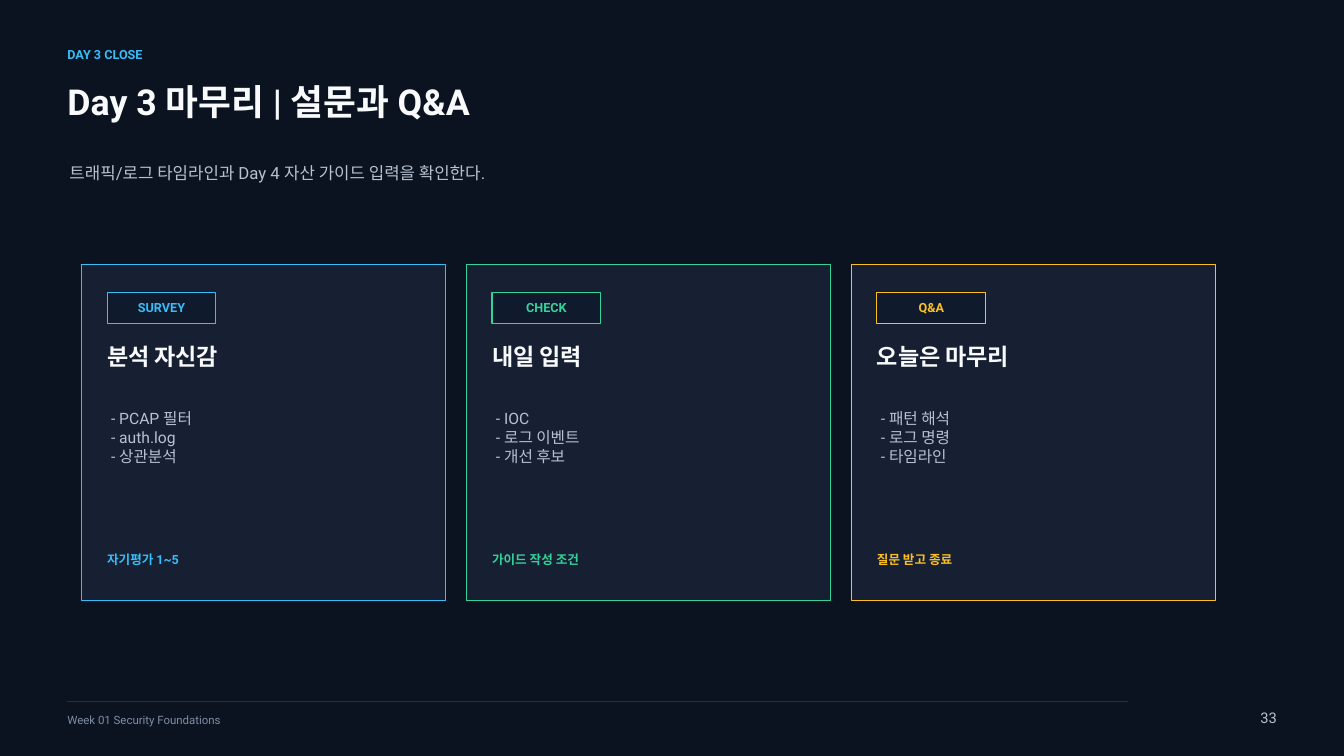
from dataclasses import dataclass

import lxml.etree
import pptx
import pptx.dml.color
import pptx.enum.shapes
import pptx.enum.text
import pptx.oxml.ns
import pptx.presentation
import pptx.shapes.base
import pptx.slide
import pptx.text.text
import pptx.util

Cm = pptx.util.Cm
Align = pptx.enum.text.PP_ALIGN
Anchor = pptx.enum.text.MSO_ANCHOR

COLORS = {
    "background": "0B1220",
    "card": "172033",
    "chip": "0F1B2D",
    "rule": "243244",
    "heading": "F8FAFC",
    "body": "B6C2D1",
    "footer": "7D8EA3",
    "blue": "38BDF8",
    "green": "34D399",
    "amber": "FBBF24",
}
FONT = "Roboto"
MARGIN = 1.7
CARD_LEFT, CARD_TOP, CARD_WIDTH, CARD_HEIGHT = 2.06, 6.66, 9.17, 8.47
CARD_STEP = 9.7
CARD_PADDING = 0.64


@dataclass(frozen=True)
class Box:
    """A rectangle measured in centimetres."""

    left: float
    top: float
    width: float
    height: float


@dataclass(frozen=True)
class TextStyle:
    size: float
    color: str
    bold: bool = False
    align: Align = Align.LEFT
    anchor: Anchor = Anchor.TOP
    side_inset: float = 0


@dataclass(frozen=True)
class Card:
    label: str
    heading: str
    items: tuple[str, ...]
    note: str
    accent: str


CARDS = (
    Card("SURVEY", "분석 자신감", ("- PCAP 필터", "- auth.log", "- 상관분석"),
         "자기평가 1~5", "blue"),
    Card("CHECK", "내일 입력", ("- IOC", "- 로그 이벤트", "- 개선 후보"),
         "가이드 작성 조건", "green"),
    Card("Q&A", "오늘은 마무리", ("- 패턴 해석", "- 로그 명령", "- 타임라인"),
         "질문 받고 종료", "amber"),
)


def rgb(name: str) -> pptx.dml.color.RGBColor:
    return pptx.dml.color.RGBColor.from_string(COLORS[name])


def lengths(box: Box) -> tuple[pptx.util.Length, ...]:
    return Cm(box.left), Cm(box.top), Cm(box.width), Cm(box.height)


def set_attributes(target: object, values: dict[str, object]) -> None:
    for name, value in values.items():
        setattr(target, name, value)


def write_text(frame: pptx.text.text.TextFrame, lines: tuple[str, ...], style: TextStyle) -> None:
    set_attributes(frame, {
        "word_wrap": True,
        "auto_size": pptx.enum.text.MSO_AUTO_SIZE.NONE,
        "vertical_anchor": style.anchor,
        "margin_left": Cm(style.side_inset),
        "margin_right": Cm(style.side_inset),
        "margin_top": 0,
        "margin_bottom": 0,
    })
    frame.text = "\n".join(lines)
    for paragraph in frame.paragraphs:
        paragraph.alignment = style.align
        set_attributes(paragraph.font, {
            "name": FONT,
            "size": pptx.util.Pt(style.size),
            "bold": style.bold,
        })
        paragraph.font.color.rgb = rgb(style.color)


def add_text(slide: pptx.slide.Slide, box: Box, style: TextStyle, *lines: str) -> None:
    write_text(slide.shapes.add_textbox(*lengths(box)).text_frame, lines, style)


def add_panel(slide: pptx.slide.Slide, box: Box, fill: str, line: str) -> pptx.shapes.base.BaseShape:
    panel = slide.shapes.add_shape(pptx.enum.shapes.MSO_SHAPE.RECTANGLE, *lengths(box))
    panel.shadow.inherit = False
    panel.fill.solid()
    panel.fill.fore_color.rgb = rgb(fill)
    panel.line.color.rgb = rgb(line)
    panel.line.width = pptx.util.Pt(0.75)
    return panel


def add_card(slide: pptx.slide.Slide, card: Card, left: float) -> None:
    add_panel(slide, Box(left, CARD_TOP, CARD_WIDTH, CARD_HEIGHT), "card", card.accent)
    inner_left = left + CARD_PADDING
    inner_width = CARD_WIDTH - 2 * CARD_PADDING
    chip = add_panel(slide, Box(inner_left, 7.36, 2.74, 0.79), "chip", card.accent)
    write_text(chip.text_frame, (card.label,),
               TextStyle(9, card.accent, True, Align.CENTER, Anchor.MIDDLE))
    add_text(slide, Box(inner_left, 8.64, inner_width, 1.12),
             TextStyle(16.5, "heading", True), card.heading)
    add_text(slide, Box(inner_left, 10.31, inner_width, 3.66),
             TextStyle(11.2, "body", side_inset=0.1), *card.items)
    add_text(slide, Box(inner_left, 13.92, inner_width, 0.79),
             TextStyle(9, card.accent, True), card.note)


def add_header(slide: pptx.slide.Slide) -> None:
    add_text(slide, Box(MARGIN, 1.17, 7.14, 0.58), TextStyle(9, "blue", True), "DAY 3 CLOSE")
    title = slide.shapes.title
    names = ("left", "top", "width", "height")
    set_attributes(title, dict(zip(names, lengths(Box(MARGIN, 2.01, 23.83, 2.16)))))
    write_text(title.text_frame, ("Day 3 마무리 | 설문과 Q&A",), TextStyle(25.5, "heading", True))
    add_text(slide, Box(1.75, 4.11, 24.33, 1.17), TextStyle(12, "body"),
             "트래픽/로그 타임라인과 Day 4 자산 가이드 입력을 확인한다.")


def add_footer(slide: pptx.slide.Slide) -> None:
    rule_top = Cm(17.68)
    rule = slide.shapes.add_connector(
        pptx.enum.shapes.MSO_CONNECTOR.STRAIGHT, Cm(MARGIN), rule_top, Cm(28.42), rule_top)
    rule.line.color.rgb = rgb("rule")
    rule.line.width = pptx.util.Pt(0.75)
    lxml.etree.SubElement(rule._element.spPr, pptx.oxml.ns.qn("a:effectLst"))
    add_text(slide, Box(MARGIN, 17.98, 15.88, 0.53), TextStyle(8.2, "footer"),
             "Week 01 Security Foundations")
    add_text(slide, Box(30.96, 17.86, 1.22, 0.69),
             TextStyle(10.5, "body", align=Align.RIGHT), "33")


def build_presentation() -> pptx.presentation.Presentation:
    presentation = pptx.Presentation()
    presentation.slide_width = Cm(33.87)
    presentation.slide_height = Cm(19.05)
    slide = presentation.slides.add_slide(presentation.slide_layouts.get_by_name("Title Only"))
    slide.background.fill.solid()
    slide.background.fill.fore_color.rgb = rgb("background")
    add_header(slide)
    for index, card in enumerate(CARDS):
        add_card(slide, card, CARD_LEFT + index * CARD_STEP)
    add_footer(slide)
    return presentation


if __name__ == "__main__":
    build_presentation().save("out.pptx")
